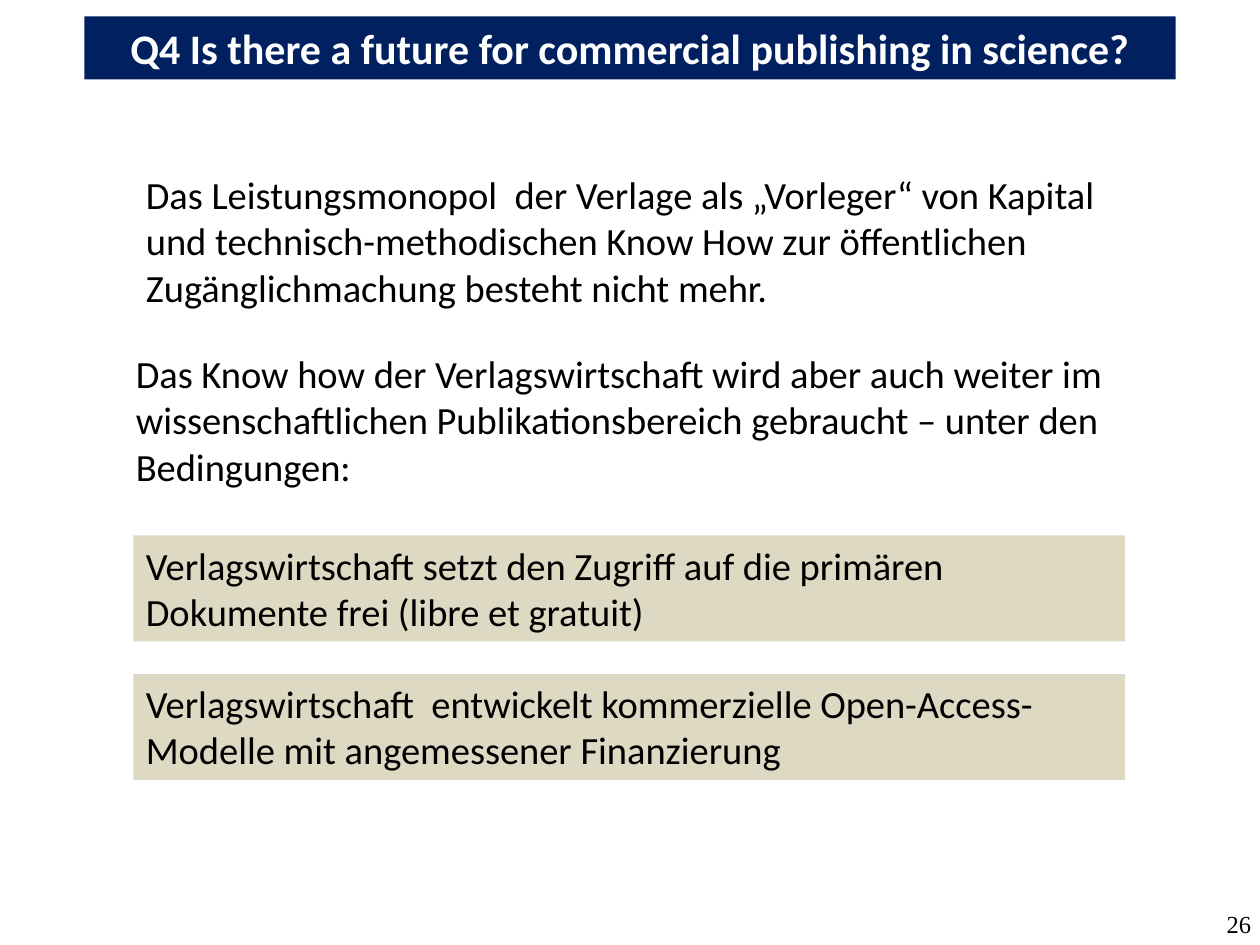
from pptx import Presentation
from pptx.dml.color import RGBColor
from pptx.enum.text import MSO_ANCHOR, PP_ALIGN
from pptx.util import Inches, Pt

LEFT, CENTER, RIGHT = PP_ALIGN.LEFT, PP_ALIGN.CENTER, PP_ALIGN.RIGHT
TOP, MIDDLE, BOTTOM = MSO_ANCHOR.TOP, MSO_ANCHOR.MIDDLE, MSO_ANCHOR.BOTTOM
WIDTH, HEIGHT = 10, 7.5
TITLE_ONLY = 5
COLORS = {"navy": "002060", "sand": "DDD9C3", "black": "000000", "white": "FFFFFF"}
BODY_LEFT, BODY_WIDTH = 1.06, 7.87
STATEMENT_HEIGHT, CONDITION_HEIGHT = 1.21, 0.84
CONDITION_TOP, CONDITION_STEP = 4.25, 1.1

TITLE = "Q4 Is there a future for commercial publishing in science?"
STATEMENTS = [
    (BODY_LEFT, 1.31, "Das Leistungsmonopol  der Verlage als „Vorleger“ von Kapital und "
     "technisch-methodischen Know How zur öffentlichen Zugänglichmachung besteht nicht mehr."),
    (0.98, 2.73, "Das Know how der Verlagswirtschaft wird aber auch weiter im "
     "wissenschaftlichen Publikationsbereich gebraucht – unter den Bedingungen:"),
]
CONDITIONS = [
    "Verlagswirtschaft setzt den Zugriff auf die primären Dokumente frei (libre et gratuit)",
    "Verlagswirtschaft  entwickelt kommerzielle Open-Access-Modelle mit angemessener Finanzierung",
]


def color(name):
    """Return the named colour."""
    return RGBColor.from_string(COLORS[name])


def write(box, text, size=22, font="Calibri", ink="black", bold=False, align=LEFT, anchor=TOP):
    """Put formatted, wrapped text into a box."""
    frame = box.text_frame
    frame.text = text
    frame.word_wrap = True
    frame.vertical_anchor = anchor
    para = frame.paragraphs[0]
    para.alignment = align
    for span in para.runs:
        span.font.size = Pt(size)
        span.font.name = font
        span.font.bold = bold
        span.font.color.rgb = color(ink)


def fill(box, name):
    """Give a box a solid fill."""
    box.fill.solid()
    box.fill.fore_color.rgb = color(name)


def add_title(page):
    """Turn the title placeholder into the centred banner."""
    banner = page.shapes.title
    banner.width, banner.height = Inches(8.66), Inches(0.5)
    banner.left, banner.top = Inches((WIDTH - 8.66) / 2), Inches(0.13)
    fill(banner, "navy")
    write(banner, TITLE, size=24, ink="white", bold=True, align=CENTER, anchor=MIDDLE)


def add_text(page, left, top, width, height, text, **style):
    """Add a text box and return it."""
    box = page.shapes.add_textbox(Inches(left), Inches(top), Inches(width), Inches(height))
    write(box, text, **style)
    return box


def add_page_number(page, number):
    """Add the page number in the bottom right corner."""
    box = add_text(page, 9.25, 6.98, 0.68, HEIGHT - 6.98, number, size=14,
                   font="Times New Roman", align=RIGHT, anchor=BOTTOM)
    frame = box.text_frame
    frame.margin_left = frame.margin_right = frame.margin_top = 0
    frame.margin_bottom = Inches(0.05)


def main():
    """Build and save the slide."""
    deck = Presentation()
    deck.slide_width, deck.slide_height = Inches(WIDTH), Inches(HEIGHT)
    page = deck.slides.add_slide(deck.slide_layouts[TITLE_ONLY])
    add_title(page)
    for left, top, text in STATEMENTS:
        add_text(page, left, top, BODY_WIDTH, STATEMENT_HEIGHT, text)
    for row, text in enumerate(CONDITIONS):
        top = CONDITION_TOP + row * CONDITION_STEP
        fill(add_text(page, BODY_LEFT, top, BODY_WIDTH, CONDITION_HEIGHT, text), "sand")
    add_page_number(page, "26")
    deck.save("out.pptx")


if __name__ == "__main__":
    main()
